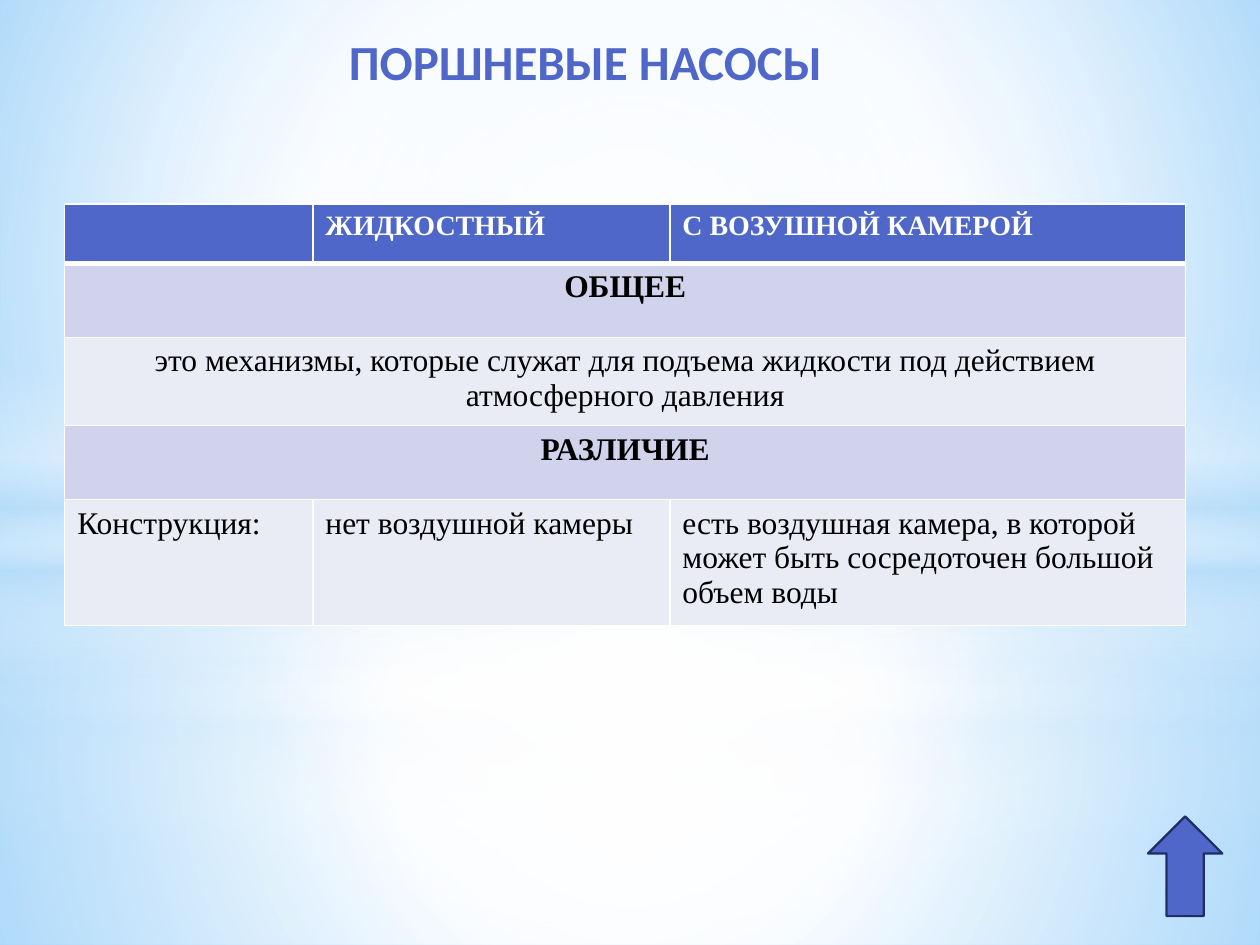
from lxml import etree
from pptx import Presentation
from pptx import util as u
from pptx.dml.color import RGBColor
from pptx.enum import shapes, text
from pptx.oxml import ns, parse_xml

Pt = u.Pt
BLUE = RGBColor(0x4E, 0x67, 0xC8)
NAVY = RGBColor(0x1F, 0x2E, 0x69)
BAND = RGBColor(0xD0, 0xD3, 0xEB)
PALE = RGBColor(0xE9, 0xEB, 0xF5)
WHITE = RGBColor(0xFF, 0xFF, 0xFF)
BLACK = RGBColor(0, 0, 0)
SKY = RGBColor(0xB4, 0xDC, 0xFA)
SKY_EDGE = RGBColor(0x5B, 0xB9, 0xFF)
SKY_CORE = RGBColor(0x9E, 0xD5, 0xFF)
SERIF = "Times New Roman"
CENTER = (50, 50, 50, 50)
BEAM = [(0, WHITE, 0), (29, WHITE, 30), (45, SKY, 40),
        (55, WHITE, 26), (65, SKY, 60), (100, WHITE, 0)]


def set_gradient(fill, parent, stops, to=None):
    """Fill with a circular gradient focused on `to`, or a vertical one without it."""
    fill.gradient()
    grad = next(parent.iter(ns.qn("a:gradFill")))
    new = parse_xml(f'<a:gradFill {ns.nsdecls("a")} rotWithShape="1"><a:gsLst/></a:gradFill>')
    for pos, color, alpha in stops:
        gs = etree.SubElement(new[0], ns.qn("a:gs"), pos=str(pos * 1000))
        clr = etree.SubElement(gs, ns.qn("a:srgbClr"), val=str(color))
        if alpha < 100:
            etree.SubElement(clr, ns.qn("a:alpha"), val=str(alpha * 1000))
    if to:
        path = etree.SubElement(new, ns.qn("a:path"), path="circle")
        sides = {k: str(v * 1000) for k, v in zip("ltrb", to)}
        etree.SubElement(path, ns.qn("a:fillToRect"), **sides)
    else:
        etree.SubElement(new, ns.qn("a:lin"), ang="5400000", scaled="0")
    grad.getparent().replace(grad, new)


def add_glow(s, kind, top, height, stops, to=CENTER):
    """Add a full-width translucent gradient layer."""
    sp = s.shapes.add_shape(kind, 0, Pt(top), Pt(720), Pt(height))
    sp.shadow.inherit = False
    sp.line.fill.background()
    set_gradient(sp.fill, sp._element.spPr, stops, to)


def add_backdrop(s):
    """Paint the background and its two sets of glow layers."""
    rect, oval = shapes.MSO_SHAPE.RECTANGLE, shapes.MSO_SHAPE.OVAL
    set_gradient(s.background.fill, s._element,
                 [(0, SKY_CORE, 100), (60, WHITE, 100), (100, SKY_EDGE, 100)],
                 (20, 10, 20, 60))
    for split, beam_top, shift, fade in ((402, 297, 0, 56), (304.5, 209, 1, 54)):
        add_glow(s, rect, split, 540 - split,
                 [(0, WHITE, 91 + shift), (37, WHITE, 76 + shift), (100, SKY, 79 + shift)])
        add_glow(s, rect, 0, split,
                 [(0, WHITE, 89 + shift), (48, WHITE, 62 + shift), (100, SKY, 79 + shift)])
        add_glow(s, rect, beam_top, 180, BEAM, None)
        add_glow(s, oval, 126, 402, [(0, WHITE, 100), (fade, WHITE, 0)])


def add_run(p, content, size, font, color, bold):
    """Append a formatted run to a paragraph."""
    r = p.add_run()
    r.text = content
    r.font.size, r.font.name, r.font.bold = Pt(size), font, bold
    r.font.color.rgb = color


def add_title(s, content):
    """Add the centred slide title."""
    tf = s.shapes.add_textbox(Pt(99.5), Pt(15), Pt(470), Pt(39.5)).text_frame
    tf.word_wrap = True
    tf.vertical_anchor = text.MSO_ANCHOR.MIDDLE
    p = tf.paragraphs[0]
    p.alignment = text.PP_ALIGN.CENTER
    add_run(p, content, 28, "Calibri", BLUE, True)


def set_borders(cell, bottom):
    """Draw white cell borders with the given bottom width."""
    tcPr = cell._tc.get_or_add_tcPr()
    for i, (side, width) in enumerate(zip("LRTB", (1, 1, 1, bottom))):
        tcPr.insert(i, parse_xml(
            f'<a:ln{side} {ns.nsdecls("a")} w="{Pt(width)}"><a:solidFill>'
            f'<a:srgbClr val="{WHITE}"/></a:solidFill></a:ln{side}>'))


def add_comparison(s, rows, widths, heights):
    """Add the table; a row with a single text spans all columns."""
    tbl = s.shapes.add_table(len(rows), len(widths), Pt(37), Pt(116.5),
                             Pt(sum(widths)), Pt(sum(heights))).table
    for col, width in zip(tbl.columns, widths):
        col.width = Pt(width)
    for i, (row, height) in enumerate(zip(rows, heights)):
        fill, size, color, bold, texts = row
        tbl.rows[i].height = Pt(height)
        spans = len(texts) == 1
        for j in range(len(widths)):
            cell = tbl.cell(i, j)
            cell.fill.solid()
            cell.fill.fore_color.rgb = fill
            set_borders(cell, 1 if i else 3)
        if spans:
            tbl.cell(i, 0).merge(tbl.cell(i, len(widths) - 1))
        for j, content in enumerate(texts):
            p = tbl.cell(i, j).text_frame.paragraphs[0]
            p.alignment = text.PP_ALIGN.CENTER if spans else text.PP_ALIGN.LEFT
            if content:
                add_run(p, content, size, SERIF, color, bold)


def add_up_arrow(s):
    """Add the upward arrow in the corner."""
    sp = s.shapes.add_shape(shapes.MSO_SHAPE.UP_ARROW, Pt(656), Pt(466.5), Pt(42.5), Pt(57))
    sp.shadow.inherit = False
    sp.fill.solid()
    sp.fill.fore_color.rgb = BLUE
    sp.line.color.rgb = NAVY
    sp.line.width = Pt(1.25)


def main():
    """Build and save the slide."""
    prs = Presentation()
    prs.slide_width, prs.slide_height = Pt(720), Pt(540)
    s = prs.slides.add_slide(prs.slide_layouts[6])
    add_backdrop(s)
    add_title(s, "ПОРШНЕВЫЕ НАСОСЫ")
    rows = [
        (BLUE, 16, WHITE, True, ["", "ЖИДКОСТНЫЙ", "С ВОЗУШНОЙ КАМЕРОЙ"]),
        (BAND, 18, BLACK, True, ["ОБЩЕЕ"]),
        (PALE, 18, BLACK, False, ["это механизмы, которые служат для подъема жидкости "
                                  "под действием атмосферного давления"]),
        (BAND, 18, BLACK, True, ["РАЗЛИЧИЕ"]),
        (PALE, 18, BLACK, False, ["Конструкция:", "нет воздушной камеры",
                                  "есть воздушная камера, в которой может быть "
                                  "сосредоточен большой объем воды"]),
    ]
    add_comparison(s, rows, (141.8, 204, 294.8), (34, 42.3, 46.8, 42.3, 67))
    add_up_arrow(s)
    prs.save("out.pptx")


if __name__ == "__main__":
    main()
